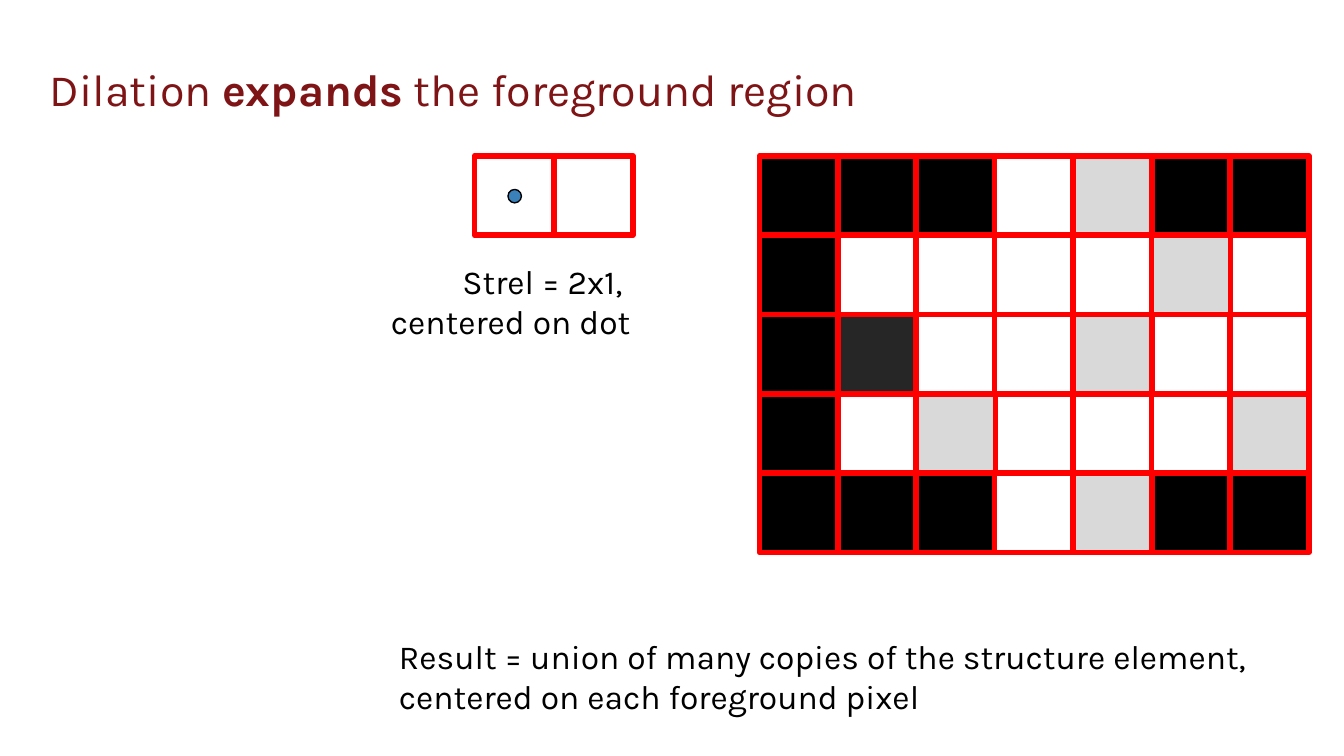
"""Build a slide showing how dilation expands a foreground region."""
import pptx
import pptx.dml.color
import pptx.enum.shapes
import pptx.enum.text
import pptx.util

Inches = pptx.util.Inches
Kind = pptx.enum.shapes.MSO_SHAPE
Align = pptx.enum.text.PP_ALIGN
Anchor = pptx.enum.text.MSO_ANCHOR

COLORS = {
    "title": "7F1416", "text": "000000", "edge": "FF0000", "dot": "3A81BA",
    "K": "000000", "D": "262626", "W": "FFFFFF", "G": "D9D9D9",
}
GRID = ["KKKWGKK", "KWWWWGW", "KDWWGWW", "KWGWWWG", "KKKWGKK"]
SIDE = 0.59


def write(shape, text, box, size=18, ink="text", align=Align.LEFT,
          anchor=Anchor.TOP, inset=0.05, strong=""):
    shape.left, shape.top, shape.width, shape.height = map(Inches, box)
    frame = shape.text_frame
    frame.word_wrap = True
    frame.auto_size = pptx.enum.text.MSO_AUTO_SIZE.NONE
    frame.vertical_anchor = anchor
    frame.margin_left = frame.margin_right = Inches(0.1)
    frame.margin_top = frame.margin_bottom = Inches(inset)
    for i, line in enumerate(text.split("\n")):
        para = frame.add_paragraph() if i else frame.paragraphs[0]
        para.alignment = align
        for part in line.partition(strong) if strong else [line]:
            run = para.add_run()
            run.text = part
            run.font.name = "Karla"
            run.font.size = pptx.util.Pt(size)
            run.font.bold = part == strong
            run.font.color.rgb = pptx.dml.color.RGBColor.from_string(COLORS[ink])


def draw(kind, left, top, side, fill, edge="edge", width=3):
    shape = slide.shapes.add_shape(kind, *map(Inches, (left, top, side, side)))
    shape.shadow.inherit = False
    shape.fill.solid()
    shape.fill.fore_color.rgb = pptx.dml.color.RGBColor.from_string(COLORS[fill])
    shape.line.color.rgb = pptx.dml.color.RGBColor.from_string(COLORS[edge])
    shape.line.width = pptx.util.Pt(width)


deck = pptx.Presentation()
deck.slide_width = Inches(10)
deck.slide_height = Inches(10 * 9 / 16)
slide = deck.slides.add_slide(deck.slide_layouts[5])

write(slide.shapes.title, "Dilation expands the foreground region",
      (0.27, 0.07, 9.44, 0.89), size=24, ink="title", anchor=Anchor.BOTTOM,
      inset=0.1, strong="expands")

for tone in "KDWG":
    for row, line in enumerate(GRID):
        for col, cell in enumerate(line):
            if cell == tone:
                draw(Kind.RECTANGLE, 5.65 + col * 3.5 / 6, 1.16 + row * SIDE,
                     SIDE, tone)

for col in range(2):
    draw(Kind.RECTANGLE, 3.53 + col * SIDE, 1.16, SIDE, "W")
draw(Kind.OVAL, 3.78, 1.41, 0.1, "dot", edge="text", width=0.75)

write(slide.shapes.add_textbox(0, 0, 0, 0), "Strel = 2x1, \ncentered on dot",
      (2.72, 1.89, 2.07, 0.71), align=Align.RIGHT)
write(slide.shapes.add_textbox(0, 0, 0, 0),
      "Result = union of many copies of the structure element, "
      "centered on each foreground pixel", (2.87, 4.68, 6.87, 0.71))

deck.save("out.pptx")
